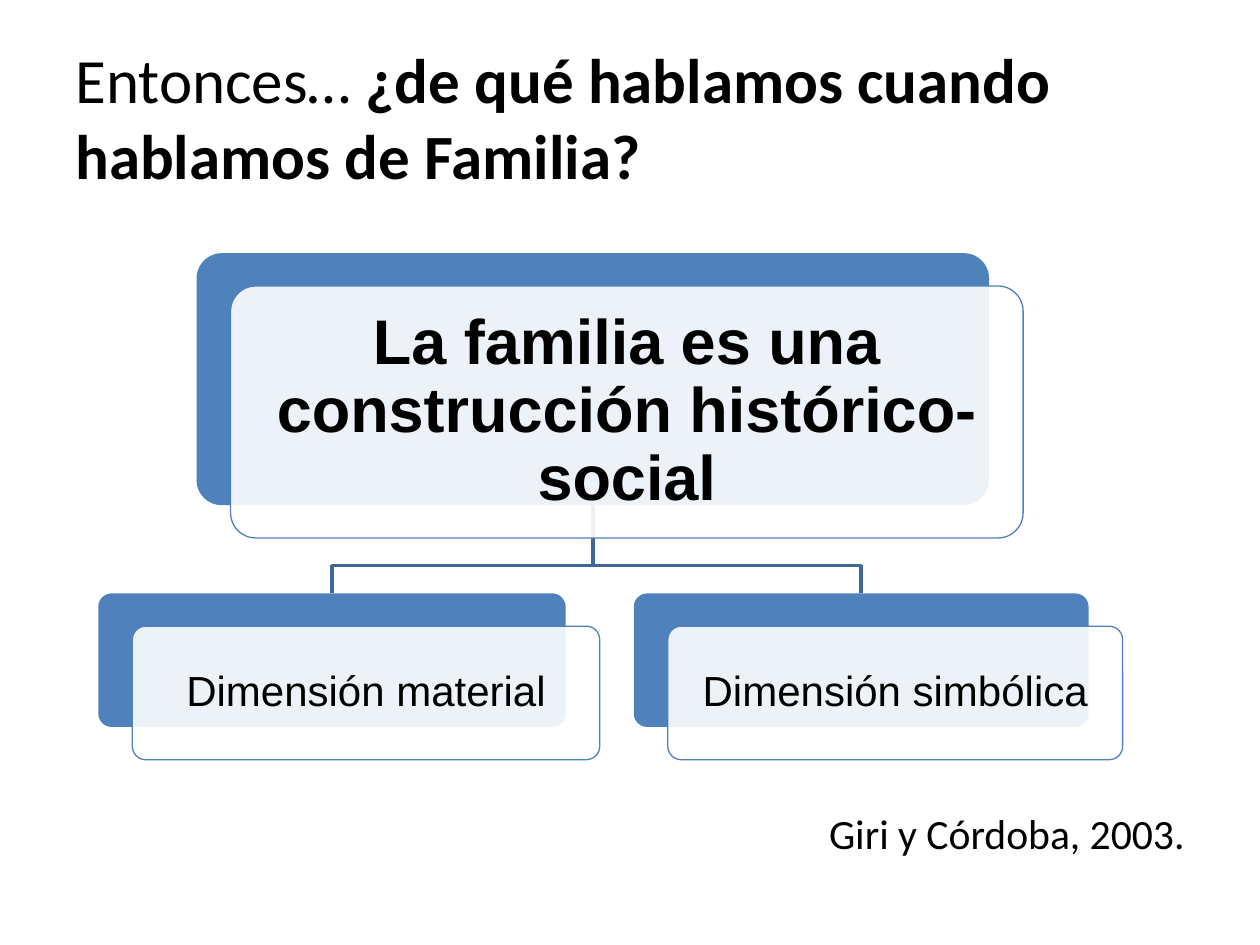
from dataclasses import dataclass

from lxml import etree
from pptx import Presentation
from pptx import util as u
from pptx.dml.color import RGBColor
from pptx.enum import shapes, text
from pptx.oxml.ns import qn


@dataclass(frozen=True)
class Theme:
    ink: RGBColor = RGBColor(0x00, 0x00, 0x00)
    card: RGBColor = RGBColor(0x4F, 0x81, 0xBD)
    front: RGBColor = RGBColor(0xFF, 0xFF, 0xFF)
    branch: RGBColor = RGBColor(0x3F, 0x67, 0x97)
    heading_font: str = "Calibri"
    card_font: str = "Arial"
    title_size: float = 36
    dimension_size: float = 24
    source_size: float = 23.8


THEME = Theme()
FRONT_OFFSET = (0.27, 0.26)


def add_text(page, area, spans, size, font, align=text.PP_ALIGN.LEFT,
             inset=(0.1, 0.05), spacing=1.0):
    """Add one paragraph; spans are (words, bold) pairs."""
    box = page.shapes.add_textbox(*map(u.Inches, area))
    frame = box.text_frame
    frame.word_wrap = True
    frame.vertical_anchor = text.MSO_ANCHOR.MIDDLE
    frame.margin_left = frame.margin_right = u.Inches(inset[0])
    frame.margin_top = frame.margin_bottom = u.Inches(inset[1])
    para = frame.paragraphs[0]
    para.alignment = align
    para.line_spacing = spacing
    for words, bold in spans:
        span = para.add_run()
        span.text = words
        span.font.name = font
        span.font.size = u.Pt(size)
        span.font.bold = bold
        span.font.color.rgb = THEME.ink


def add_panel(page, area, color):
    panel = page.shapes.add_shape(shapes.MSO_SHAPE.ROUNDED_RECTANGLE,
                                  *map(u.Inches, area))
    panel.adjustments[0] = 0.1
    panel.shadow.inherit = False
    panel.fill.solid()
    panel.fill.fore_color.rgb = color
    panel.line.fill.background()
    return panel


def set_opacity(shape, percent):
    color = shape.fill._xPr.find(qn("a:solidFill"))[0]
    etree.SubElement(color, qn("a:alpha")).set("val", str(percent * 1000))


def add_card(page, area, words, size, bold=False, inset=0.1):
    """Add a solid panel, a translucent one shifted over it, and its text."""
    left, top, width, height = area
    add_panel(page, area, THEME.card)
    front_area = (left + FRONT_OFFSET[0], top + FRONT_OFFSET[1], width, height)
    front = add_panel(page, front_area, THEME.front)
    set_opacity(front, 90)
    front.line.color.rgb = THEME.card
    front.line.width = u.Pt(0.75)
    pad = 0.03 * height
    text_area = (front_area[0] + pad, front_area[1] + pad,
                 width - 2 * pad, height - 2 * pad)
    add_text(page, text_area, [(words, bold)], size, THEME.card_font,
             text.PP_ALIGN.CENTER, (inset, inset), 0.9)


def add_branch(page, parent, child):
    """Draw an elbow line from the parent's bottom to the child's top."""
    start_x, start_y = parent[0] + parent[2] / 2, parent[1] + parent[3]
    end_x, end_y = child[0] + child[2] / 2, child[1]
    bend_y = end_y - 0.22
    points = [(start_x, start_y), (start_x, bend_y),
              (end_x, bend_y), (end_x, end_y)]
    first, *rest = [(u.Inches(x), u.Inches(y)) for x, y in points]
    builder = page.shapes.build_freeform(*first)
    builder.add_line_segments(rest, close=False)
    branch = builder.convert_to_shape()
    branch.shadow.inherit = False
    branch.fill.background()
    branch.line.color.rgb = THEME.branch
    branch.line.width = u.Pt(2)


def main():
    deck = Presentation()
    deck.slide_width, deck.slide_height = u.Inches(10), u.Inches(7.5)
    page = deck.slides.add_slide(deck.slide_layouts[6])

    add_text(page, (0.5, 0.3, 9, 1.25),
             [("Entonces… ", False),
              ("¿de qué hablamos cuando hablamos de Familia?", True)],
             THEME.title_size, THEME.heading_font)

    family = (1.56, 2.01, 6.29, 2)
    dimensions = {
        "Dimensión material": (0.78, 4.71, 3.71, 1.06),
        "Dimensión simbólica": (5.03, 4.71, 3.61, 1.06),
    }
    for area in dimensions.values():
        add_branch(page, family, area)
    add_card(page, family, "La familia es una construcción histórico-social",
             THEME.title_size, bold=True, inset=0.15)
    for words, area in dimensions.items():
        add_card(page, area, words, THEME.dimension_size)

    add_text(page, (0.5, 6.35, 9, 0.52), [("Giri y Córdoba, 2003.", False)],
             THEME.source_size, THEME.heading_font, text.PP_ALIGN.RIGHT)

    deck.save("out.pptx")


if __name__ == "__main__":
    main()
